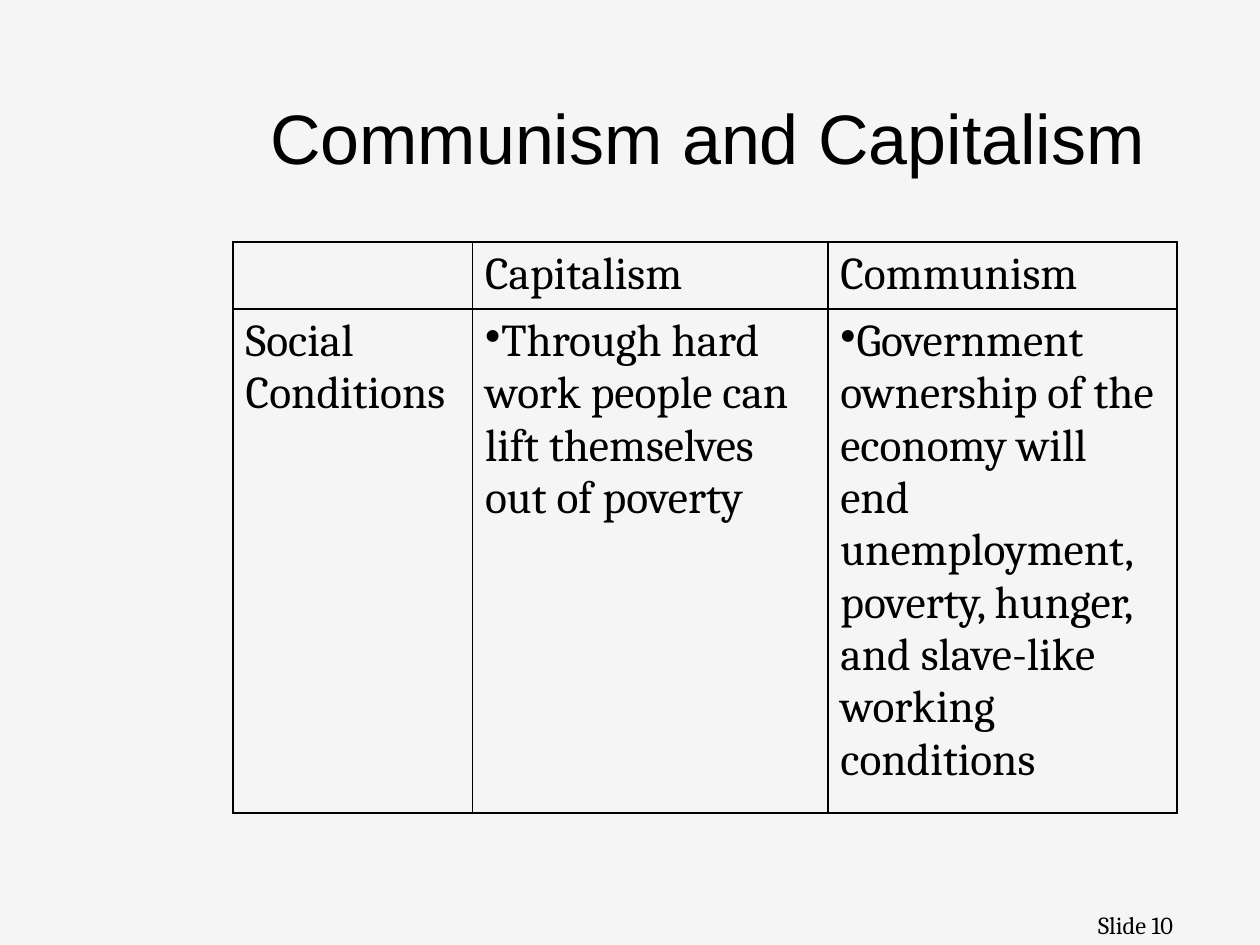
from lxml import etree
from pptx import Presentation
from pptx.dml.color import RGBColor
from pptx.enum.text import MSO_ANCHOR, PP_ALIGN
from pptx.oxml.ns import qn
from pptx.util import Inches, Pt

CENTER, RIGHT = PP_ALIGN.CENTER, PP_ALIGN.RIGHT
TOP, MIDDLE = MSO_ANCHOR.TOP, MSO_ANCHOR.MIDDLE
WIDTH, HEIGHT = Inches(10), Inches(7.5)
COLORS = {"background": "F5F5F5", "ink": "000000"}
COLUMN_WIDTHS = [1.9, 2.82, 2.77]
ROW_HEIGHTS = [0.51, 3.84]
COMPARISON = [
    ["", "Capitalism", "Communism"],
    [
        "Social Conditions",
        "Through hard work people can lift themselves out of poverty",
        "Government ownership of the economy will end unemployment, "
        "poverty, hunger, and slave-like working conditions",
    ],
]


def style_paragraph(paragraph, font_name, size):
    paragraph.font.name = font_name
    paragraph.font.size = Pt(size)
    paragraph.font.color.rgb = RGBColor.from_string(COLORS["ink"])


def add_label(slide, box, text, font_name, size, alignment, anchor):
    frame = slide.shapes.add_textbox(*map(Inches, box)).text_frame
    frame.word_wrap = True
    frame.vertical_anchor = anchor
    paragraph = frame.paragraphs[0]
    paragraph.text = text
    paragraph.alignment = alignment
    style_paragraph(paragraph, font_name, size)


def add_bullet(paragraph):
    properties = paragraph._p.get_or_add_pPr()
    properties.set("marL", "0")
    properties.set("indent", "0")
    etree.SubElement(properties, qn("a:buChar"), char="•")
    tabs = etree.SubElement(properties, qn("a:tabLst"))
    etree.SubElement(tabs, qn("a:tab"), pos=str(Inches(0.25)), algn="l")


def add_borders(cell):
    properties = cell._tc.get_or_add_tcPr()
    for index, side in enumerate(["a:lnL", "a:lnR", "a:lnT", "a:lnB"]):
        line = etree.Element(qn(side), w=str(Pt(1)))
        fill = etree.SubElement(line, qn("a:solidFill"))
        etree.SubElement(fill, qn("a:srgbClr"), val=COLORS["ink"])
        properties.insert(index, line)


def add_comparison(slide, left, top):
    box = (left, top, sum(COLUMN_WIDTHS), sum(ROW_HEIGHTS))
    table = slide.shapes.add_table(
        len(ROW_HEIGHTS), len(COLUMN_WIDTHS), *map(Inches, box)
    ).table
    table.first_row = False
    table.horz_banding = False
    for column, width in zip(table.columns, COLUMN_WIDTHS):
        column.width = Inches(width)
    for row, height in zip(table.rows, ROW_HEIGHTS):
        row.height = Inches(height)
    for row_index, texts in enumerate(COMPARISON):
        for column_index, text in enumerate(texts):
            cell = table.cell(row_index, column_index)
            cell.fill.background()
            add_borders(cell)
            paragraph = cell.text_frame.paragraphs[0]
            paragraph.text = text
            if row_index and column_index:
                add_bullet(paragraph)
            style_paragraph(paragraph, "Cambria", 26)


def main():
    presentation = Presentation()
    presentation.slide_width, presentation.slide_height = WIDTH, HEIGHT
    slide = presentation.slides.add_slide(presentation.slide_layouts[6])
    background = slide.background.fill
    background.solid()
    background.fore_color.rgb = RGBColor.from_string(COLORS["background"])
    add_label(slide, (7.33, 7.17, 2.08, 0.5), "Slide 10", "Cambria", 14, RIGHT, TOP)
    add_label(slide, (1.78, 0.46, 7.67, 1.25), "Communism and Capitalism",
              "Arial", 40, CENTER, MIDDLE)
    add_comparison(slide, 1.85, 1.92)
    presentation.save("out.pptx")


if __name__ == "__main__":
    main()
